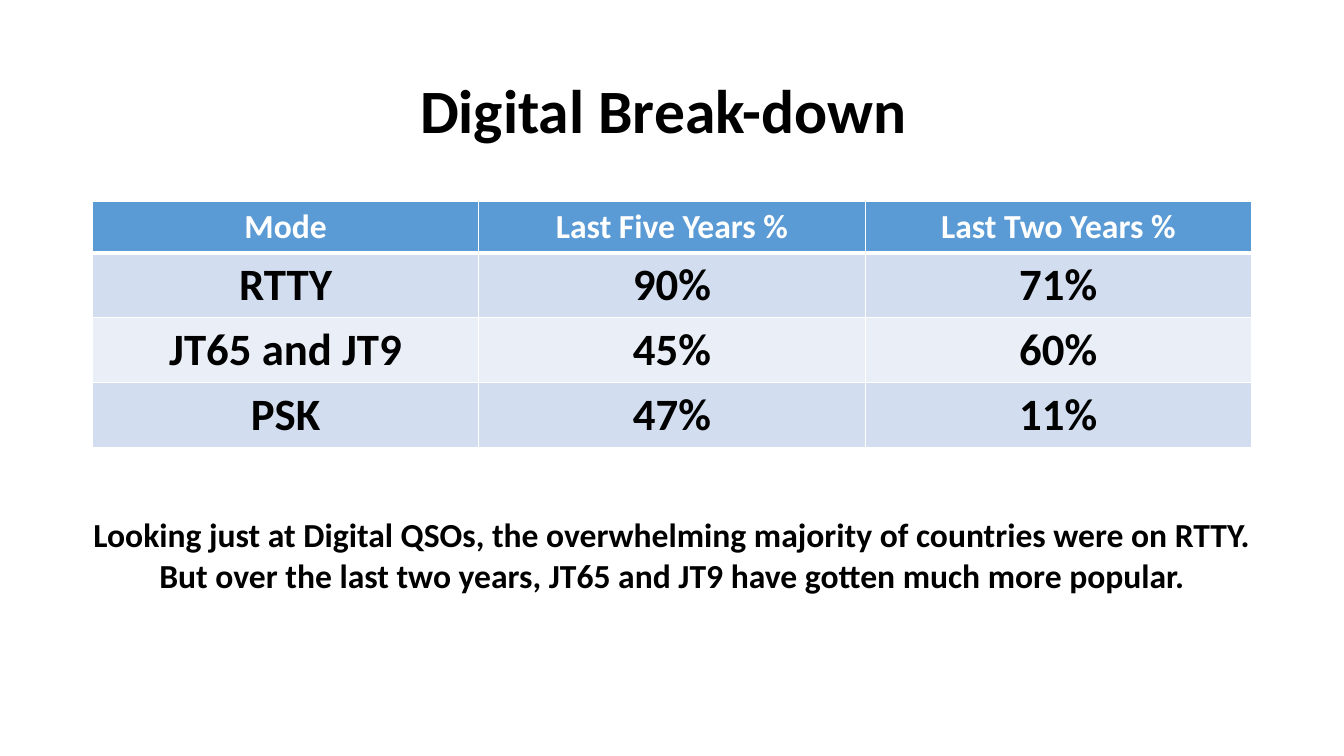
"""Build the slide that breaks digital contacts down by mode."""
from lxml import etree
from pptx import Presentation
from pptx import util as u
from pptx.dml.color import RGBColor
from pptx.enum import text
from pptx.oxml.ns import qn

COLORS = {"ink": "000000", "white": "FFFFFF", "header": "5B9BD5",
          "band_dark": "D2DEEF", "band_light": "EAEFF7"}
FONT = "Calibri"
LEFT, WIDTH = 2.33, 29.21
HEADER_HEIGHT, ROW_HEIGHT = 1.27, 1.63
ROWS = [
    ("Mode", "Last Five Years %", "Last Two Years %"),
    ("RTTY", "90%", "71%"),
    ("JT65 and JT9", "45%", "60%"),
    ("PSK", "47%", "11%"),
]
CAPTION = [
    "Looking just at Digital QSOs, the overwhelming majority of countries were on RTTY.",
    "But over the last two years, JT65 and JT9 have gotten much more popular.",
]


def rgb(name):
    """Return the named colour."""
    return RGBColor.from_string(COLORS[name])


def write(tf, *lines, size=24, color="ink", spacing=None):
    """Fill a text frame with centred bold lines."""
    for i, line in enumerate(lines):
        p = tf.add_paragraph() if i else tf.paragraphs[0]
        p.alignment = text.PP_ALIGN.CENTER
        if spacing:
            p.line_spacing = spacing
        r = p.add_run()
        r.text = line
        r.font.name, r.font.size, r.font.bold = FONT, u.Pt(size), True
        r.font.color.rgb = rgb(color)


def add_borders(cell, **widths):
    """Draw white cell borders with the given widths in points."""
    tcPr = cell._tc.get_or_add_tcPr()
    for side in "LRTB":
        ln = etree.SubElement(tcPr, qn(f"a:ln{side}"), w=str(u.Pt(widths.get(side, 1))))
        fill = etree.SubElement(ln, qn("a:solidFill"))
        etree.SubElement(fill, qn("a:srgbClr"), val=COLORS["white"])


def add_title(s, title):
    """Place the title in its placeholder."""
    sp = s.shapes.title
    sp.left, sp.top, sp.width, sp.height = map(u.Cm, (LEFT, 1.02, WIDTH, 3.68))
    sp.text_frame.vertical_anchor = text.MSO_ANCHOR.MIDDLE
    write(sp.text_frame, title, size=44, spacing=0.9)


def add_mode_table(s, rows):
    """Add the banded table of modes."""
    height = HEADER_HEIGHT + ROW_HEIGHT * (len(rows) - 1)
    table = s.shapes.add_table(len(rows), len(rows[0]), u.Cm(LEFT), u.Cm(5.08),
                               u.Cm(WIDTH), u.Cm(height)).table
    for i, row in enumerate(rows):
        header = i == 0
        table.rows[i].height = u.Cm(HEADER_HEIGHT if header else ROW_HEIGHT)
        band = "header" if header else "band_dark" if i % 2 else "band_light"
        for j, value in enumerate(row):
            cell = table.cell(i, j)
            add_borders(cell, B=3 if header else 1, T=3 if i == 1 else 1)
            cell.fill.solid()
            cell.fill.fore_color.rgb = rgb(band)
            write(cell.text_frame, value, size=24 if header else 32,
                  color="white" if header else "ink")


def add_caption(s, lines, width):
    """Add the remark across the full slide width."""
    tf = s.shapes.add_textbox(0, u.Cm(12.83), width, u.Cm(2.31)).text_frame
    tf.word_wrap = True
    tf.auto_size = text.MSO_AUTO_SIZE.SHAPE_TO_FIT_TEXT
    write(tf, *lines)


def main():
    """Build and save the presentation."""
    prs = Presentation()
    prs.slide_width, prs.slide_height = u.Cm(33.87), u.Cm(19.05)
    s = prs.slides.add_slide(prs.slide_layouts.get_by_name("Title Only"))
    add_title(s, "Digital Break-down\t")
    add_mode_table(s, ROWS)
    add_caption(s, CAPTION, prs.slide_width)
    prs.save("out.pptx")


if __name__ == "__main__":
    main()
